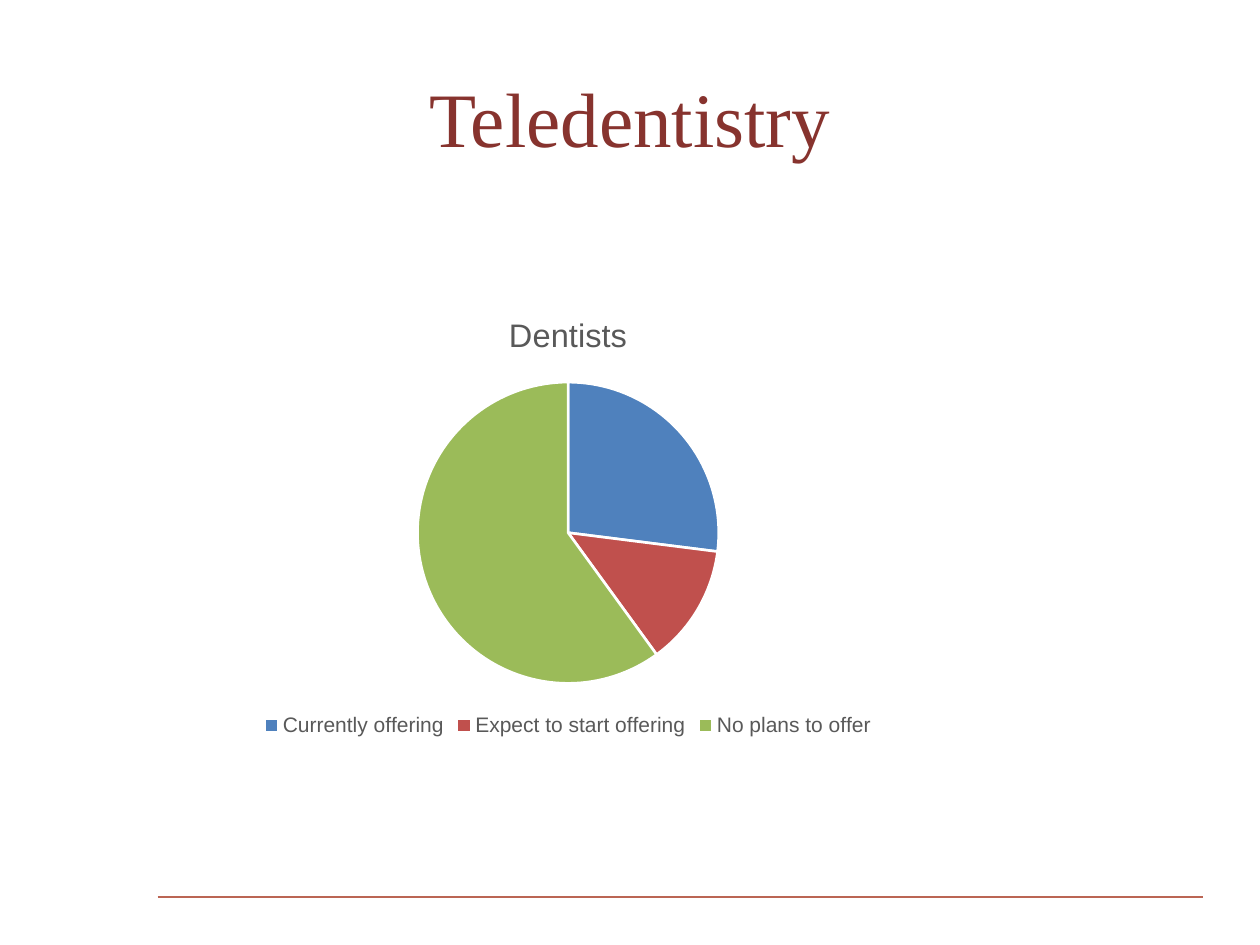
from typing import NamedTuple

from lxml import etree
from pptx import Presentation
from pptx.chart.data import CategoryChartData
from pptx.dml.color import RGBColor
from pptx.enum.chart import XL_CHART_TYPE as ChartType, XL_LEGEND_POSITION as LegendPos
from pptx.enum.shapes import MSO_CONNECTOR as Connector
from pptx.enum.text import MSO_ANCHOR as Anchor, PP_ALIGN as Align
from pptx.oxml import parse_xml
from pptx.oxml.ns import nsdecls, qn
from pptx.util import Pt


class Slice(NamedTuple):
    label: str
    value: int
    color: str


SLICES = [
    Slice("Currently offering", 27, "4F81BD"),
    Slice("Expect to start offering", 13, "C0504D"),
    Slice("No plans to offer", 60, "9BBB59"),
]
GREY = "595959"


def rgb(color: str) -> RGBColor:
    return RGBColor.from_string(color)


def style_font(font, name: str, size: float, color: str) -> None:
    font.name, font.size, font.bold = name, Pt(size), False
    font.color.rgb = rgb(color)


def add_rule(s) -> None:
    line = s.shapes.add_connector(Connector.STRAIGHT, Pt(90), Pt(512.6), Pt(687.6), Pt(512.6))
    line.line.color.rgb = rgb("BB6554")
    line.line.width = Pt(0.75)
    etree.SubElement(line._element.spPr, qn("a:effectLst"))


def add_title(s, text: str) -> None:
    tf = s.shapes.add_textbox(Pt(36), Pt(21.6), Pt(648), Pt(90)).text_frame
    tf.word_wrap = True
    tf.vertical_anchor = Anchor.MIDDLE
    p = tf.paragraphs[0]
    p.text = text
    p.alignment = Align.CENTER
    style_font(p.runs[0].font, "Times New Roman", 44, "87332E")


def add_pie(s, title: str, slices: list[Slice]) -> None:
    data = CategoryChartData()
    data.categories = [item.label for item in slices]
    data.add_series("Series 1", [item.value for item in slices])
    chart = s.shapes.add_chart(
        ChartType.PIE, Pt(14.4), Pt(167), Pt(620.6), Pt(257), data
    ).chart
    style_font(chart.font, "Arial", 10, "000000")

    # Chart title and legend
    chart.has_title = True
    tf = chart.chart_title.text_frame
    tf.text = title
    style_font(tf.paragraphs[0].runs[0].font, "Arial", 18.6, GREY)
    chart.has_legend = True
    chart.legend.position = LegendPos.BOTTOM
    chart.legend.include_in_layout = False
    style_font(chart.legend.font, "Arial", 12, GREY)

    # Slices with white borders
    plot = chart.plots[0]
    plot.vary_by_categories = True
    for i, item in enumerate(slices):
        fmt = plot.series[0].points[i].format
        fmt.fill.solid()
        fmt.fill.fore_color.rgb = rgb(item.color)
        fmt.line.color.rgb = rgb("FFFFFF")
        fmt.line.width = Pt(1.5)

    # Fixed plot area, as fractions of the chart
    area = chart._chartSpace.chart.plotArea
    for old in area.findall(qn("c:layout")):
        area.remove(old)
    edges = {"x": 0.36, "y": 0.2, "w": 0.28, "h": 0.67}
    modes = '<c:layoutTarget val="inner"/><c:xMode val="edge"/><c:yMode val="edge"/>'
    sizes = "".join(f'<c:{key} val="{val}"/>' for key, val in edges.items())
    area.insert(0, parse_xml(
        f'<c:layout {nsdecls("c")}><c:manualLayout>{modes}{sizes}</c:manualLayout></c:layout>'
    ))


def main() -> None:
    prs = Presentation()
    prs.slide_width, prs.slide_height = Pt(720), Pt(540)
    s = prs.slides.add_slide(prs.slide_layouts[6])
    add_rule(s)
    add_title(s, "Teledentistry")
    add_pie(s, "Dentists", SLICES)
    prs.save("out.pptx")


if __name__ == "__main__":
    main()
